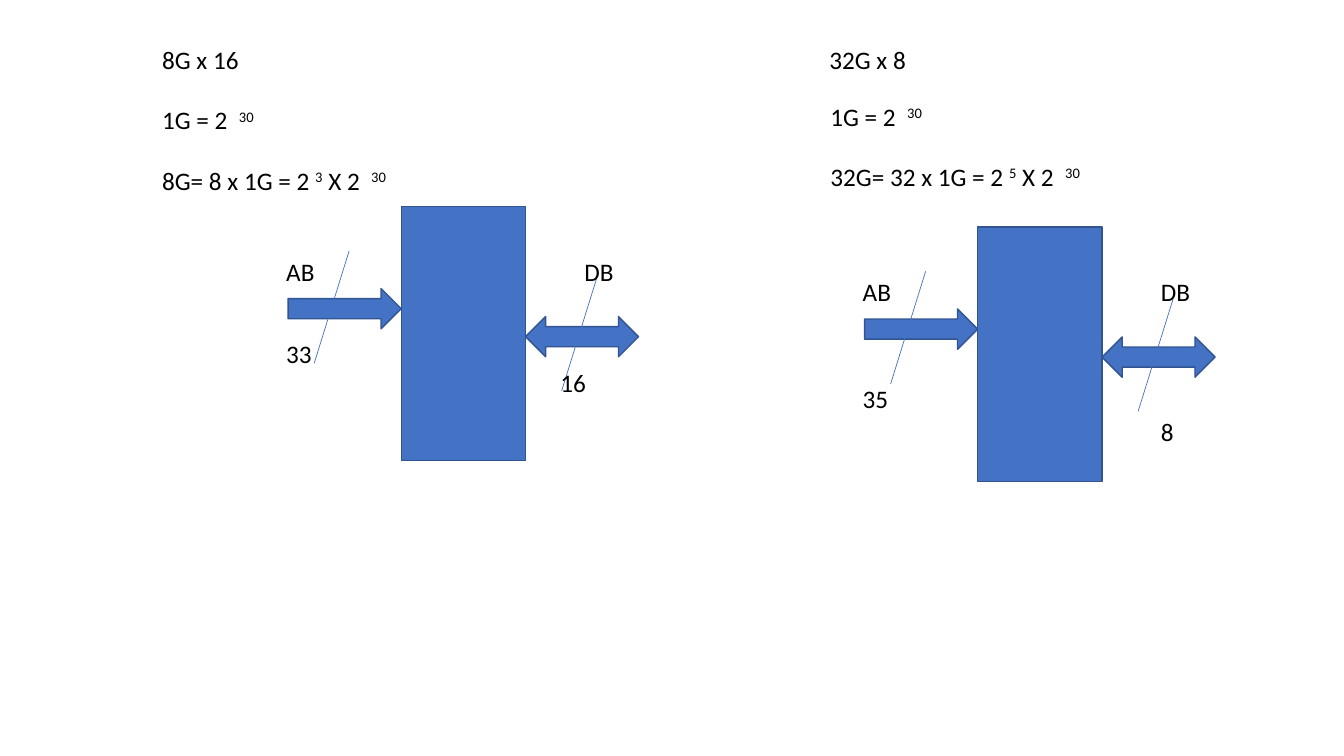
"""Build a slide that compares the address and data buses of two memories."""

from dataclasses import dataclass
from typing import Any

import pptx
import pptx.dml.color
import pptx.enum.shapes
import pptx.enum.text
import pptx.oxml
import pptx.oxml.ns
import pptx.util

Pt = pptx.util.Pt
Shape = pptx.enum.shapes.MSO_SHAPE


@dataclass(frozen=True)
class Theme:
    font: str = "Calibri"
    text_size: float = 18
    paragraph_gap: float = 21.6
    text: str = "000000"
    fill: str = "4472C4"
    outline: str = "325491"
    outline_width: float = 1
    slash_width: float = 0.5


@dataclass(frozen=True)
class Block:
    kind: Any
    left: float
    top: float
    width: float
    height: float


@dataclass(frozen=True)
class Slash:
    left: float
    top: float


@dataclass(frozen=True)
class Label:
    """Text whose paragraphs alternate between normal and superscript runs."""

    left: float
    top: float
    width: float
    height: float
    paragraphs: tuple[tuple[str, ...], ...]
    inset_top: float = 3.6


@dataclass(frozen=True)
class Memory:
    left: float
    top: float
    labels: tuple[Label, ...]


THEME = Theme()
LABEL_HEIGHT = 28.8
SLASH_RUN, SLASH_RISE = 25, 80.4

BLOCKS = (
    Block(Shape.RECTANGLE, 0, 0, 88.8, 181.6),
    Block(Shape.RIGHT_ARROW, -80.8, 58.5, 80.8, 28.8),
    Block(Shape.LEFT_RIGHT_ARROW, 88.8, 78.5, 80.8, 28.8),
)
SLASHES = (Slash(114.6, 51.2), Slash(-62.2, 31.6))
BUS_LABELS = (
    Label(-89.2, 31.6, 41, LABEL_HEIGHT, (("AB",),)),
    Label(123.8, 31.6, 58.3, LABEL_HEIGHT, (("DB",),)),
)
MEMORIES = (
    Memory(286.6, 147.6, (
        Label(108.7, 28.1, 243.4, 108.7, (
            ("8G x 16",),
            ("1G = 2  ", "30"),
            ("8G= 8 x 1G = 2 ", "3", " X 2  ", "30"),
        )),
        Label(393.1, 258.5, 54, LABEL_HEIGHT, (("16",),)),
        Label(197.3, 238.3, 33.1, LABEL_HEIGHT, (("33",),)),
    )),
    Memory(698.4, 162.2, (
        Label(585.4, 28.1, 139, LABEL_HEIGHT, (("32G x 8",),)),
        Label(822.2, 293.8, 44.6, LABEL_HEIGHT, (("8",),)),
        Label(586.1, 46.8, 243.4, 87.1, (
            ("1G = 2  ", "30"),
            ("32G= 32 x 1G = 2 ", "5", " X 2  ", "30"),
        ), 25.2),
        Label(609.1, 270, 48.2, LABEL_HEIGHT, (("35",),)),
    )),
)


def color(value: str) -> pptx.dml.color.RGBColor:
    """Turn a hexadecimal value into a colour."""
    return pptx.dml.color.RGBColor.from_string(value)


def apply_format(target: Any, values: dict[str, Any]) -> None:
    """Set every format value on the target."""
    for name, value in values.items():
        setattr(target, name, value)


def draw_block(shapes: Any, block: Block, left: float, top: float) -> None:
    """Draw a filled preset shape relative to an origin."""
    shape = shapes.add_shape(block.kind, Pt(left + block.left), Pt(top + block.top),
                             Pt(block.width), Pt(block.height))
    shape.shadow.inherit = False
    shape.fill.solid()
    shape.fill.fore_color.rgb = color(THEME.fill)
    shape.line.color.rgb = color(THEME.outline)
    shape.line.width = Pt(THEME.outline_width)


def draw_slash(shapes: Any, slash: Slash, left: float, top: float) -> None:
    """Draw the slanted stroke that marks a bus width."""
    x, y = left + slash.left, top + slash.top
    connector = shapes.add_connector(
        pptx.enum.shapes.MSO_CONNECTOR.STRAIGHT,
        Pt(x + SLASH_RUN), Pt(y), Pt(x), Pt(y + SLASH_RISE))
    connector.line.color.rgb = color(THEME.fill)
    connector.line.width = Pt(THEME.slash_width)
    properties = connector._element.spPr
    properties.append(pptx.oxml.parse_xml(
        f"<a:effectLst {pptx.oxml.ns.nsdecls('a')}/>"))


def draw_label(shapes: Any, label: Label, left: float = 0, top: float = 0) -> None:
    """Draw a text box relative to an origin."""
    shape = shapes.add_textbox(Pt(left + label.left), Pt(top + label.top),
                               Pt(label.width), Pt(label.height))
    frame = shape.text_frame
    apply_format(frame, {
        "word_wrap": True,
        "auto_size": pptx.enum.text.MSO_AUTO_SIZE.SHAPE_TO_FIT_TEXT,
        "margin_top": Pt(label.inset_top),
    })
    for number, texts in enumerate(label.paragraphs):
        paragraph = frame.add_paragraph() if number else frame.paragraphs[0]
        paragraph.space_before = Pt(THEME.paragraph_gap if number else 0)
        for position, text in enumerate(texts):
            run = paragraph.add_run()
            run.text = text
            apply_format(run.font, {"name": THEME.font, "size": Pt(THEME.text_size)})
            run.font.color.rgb = color(THEME.text)
            if position % 2:
                run._r.get_or_add_rPr().set("baseline", "30000")


def draw_memory(slide: Any, memory: Memory) -> None:
    """Draw one memory with its buses and its calculation."""
    shapes = slide.shapes.add_group_shape().shapes
    for block in BLOCKS:
        draw_block(shapes, block, memory.left, memory.top)
    for slash in SLASHES:
        draw_slash(shapes, slash, memory.left, memory.top)
    for label in BUS_LABELS:
        draw_label(shapes, label, memory.left, memory.top)
    for label in memory.labels:
        draw_label(slide.shapes, label)


def main() -> None:
    """Build and save the presentation."""
    presentation = pptx.Presentation()
    apply_format(presentation, {"slide_width": Pt(960), "slide_height": Pt(540)})
    slide = presentation.slides.add_slide(presentation.slide_layouts[6])
    for memory in MEMORIES:
        draw_memory(slide, memory)
    presentation.save("out.pptx")


if __name__ == "__main__":
    main()
